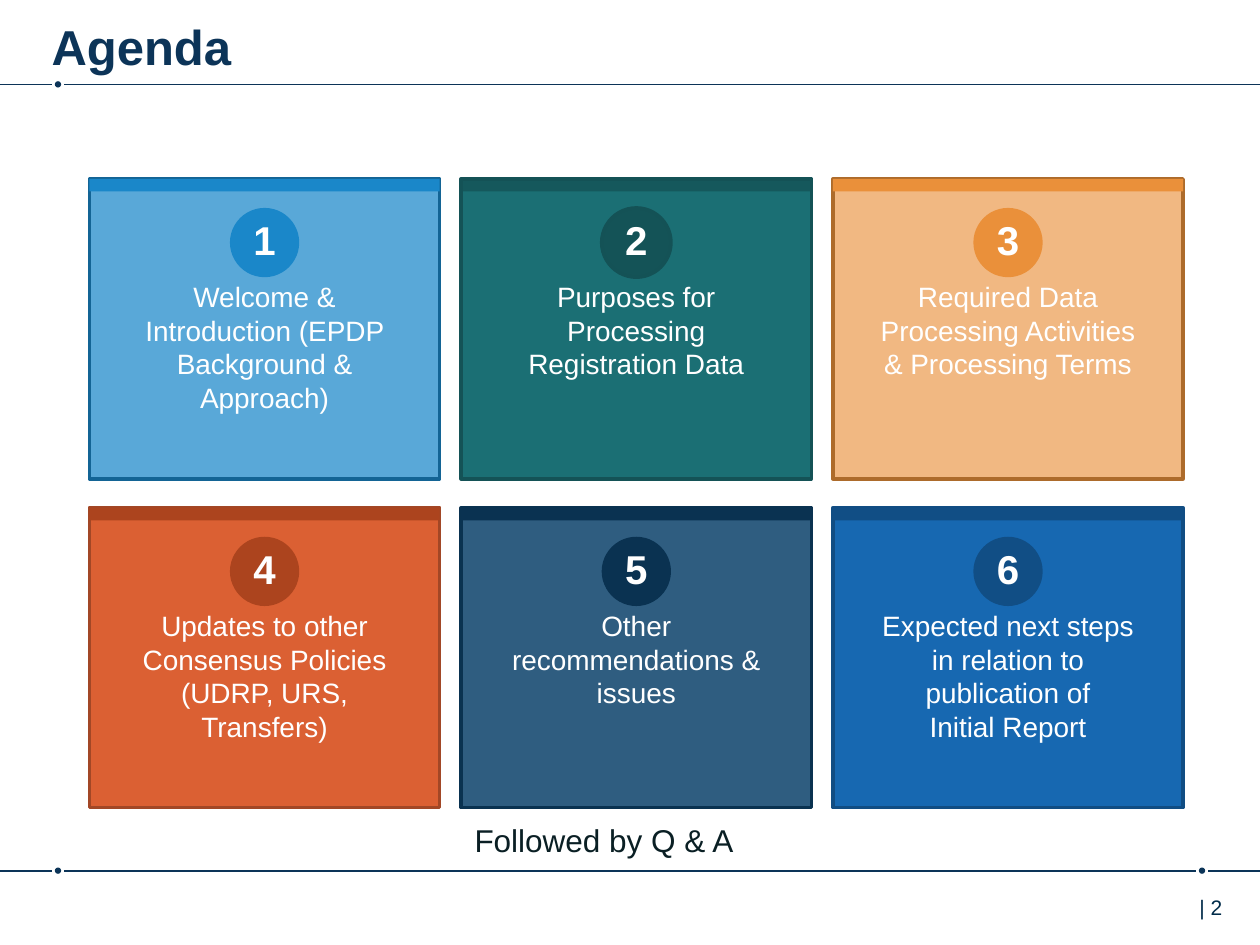
from dataclasses import dataclass

from lxml import etree
from pptx import Presentation
from pptx.dml.color import RGBColor
from pptx.enum.shapes import MSO_CONNECTOR, MSO_SHAPE
from pptx.enum.text import MSO_ANCHOR, PP_ALIGN
from pptx.oxml.ns import qn
from pptx.util import Inches, Pt

RECT, OVAL = MSO_SHAPE.RECTANGLE, MSO_SHAPE.OVAL
LINE = MSO_CONNECTOR.STRAIGHT
LEFT, CENTER = PP_ALIGN.LEFT, PP_ALIGN.CENTER
TOP = MSO_ANCHOR.TOP


@dataclass(frozen=True)
class Theme:
    font: str = "Arial"
    navy: str = "0C3458"
    page: str = "002B49"
    ink: str = "0A1F24"
    white: str = "FFFFFF"
    title: int = 28
    number: int = 23
    note: int = 18
    label: int = 16
    small: int = 12


THEME = Theme()

# Number ring: line colour or None; label: one entry per paragraph
# (body, opacity, border, accent, accent opacity, ring, label)
CARDS = [
    ("1A87C9", 72, "136495", "1A87C9", 100, None,
     ["Welcome & Introduction (EPDP Background & Approach)"]),
    ("1B6F74", 100, "145256", "145357", 80, "145256",
     ["Purposes for Processing Registration Data"]),
    ("EA903A", 63, "AD6B2B", "EA903A", 100, None,
     ["Required Data Processing Activities & Processing Terms"]),
    ("DB6033", 100, "A24726", "AC441E", 100, None,
     ["Updates to other", "Consensus Policies", "(UDRP, URS,", "Transfers)"]),
    ("0D436C", 86, "0A3250", "0A3251", 100, None,
     ["Other", "recommendations &", "issues"]),
    ("1768B1", 100, "114D83", "114E85", 100, None,
     ["Expected next steps", "in relation to", "publication of",
      "Initial Report"]),
]


def add_text(slide, box, lines, size, color, bold=False, align=CENTER,
             inset=(0.1, 0.05), space=None):
    shape = slide.shapes.add_textbox(*map(Inches, box))
    frame = shape.text_frame
    frame.word_wrap = True
    frame.vertical_anchor = TOP
    frame.margin_left = frame.margin_right = Inches(inset[0])
    frame.margin_top = frame.margin_bottom = Inches(inset[1])
    for i, line in enumerate(lines):
        para = frame.paragraphs[0] if i == 0 else frame.add_paragraph()
        para.alignment = align
        if space:
            para.line_spacing = Pt(space)
        run = para.add_run()
        run.text = line
        font = run.font
        font.name, font.size, font.bold = THEME.font, Pt(size), bold
        font.color.rgb = RGBColor.from_string(color)


def add_shape(slide, kind, box, fill, opacity=100, border=None):
    shape = slide.shapes.add_shape(kind, *map(Inches, box))
    shape.shadow.inherit = False
    shape.fill.solid()
    shape.fill.fore_color.rgb = RGBColor.from_string(fill)
    if opacity < 100:
        tint = shape.fill._xPr.find(qn("a:solidFill"))[0]
        etree.SubElement(tint, qn("a:alpha"), val=str(opacity * 1000))
    if border:
        shape.line.color.rgb = RGBColor.from_string(border)
        shape.line.width = Pt(2)
    else:
        shape.line.fill.background()


def add_rule(slide, y, dots, width=10):
    """Draw a full-width rule, broken by a small dot at each given x."""
    gap, size = 0.05, 0.05
    starts = [0] + [x + gap for x in dots]
    ends = [x - gap for x in dots] + [width]
    for x1, x2 in zip(starts, ends):
        line = slide.shapes.add_connector(
            LINE, Inches(x1), Inches(y), Inches(x2), Inches(y))
        line.line.color.rgb = RGBColor.from_string(THEME.navy)
        line.line.width = Pt(1)
        etree.SubElement(line._element.spPr, qn("a:effectLst"))
    for x in dots:
        add_shape(slide, OVAL, (x - size / 2, y - size / 2, size, size),
                  THEME.navy)


def add_card(slide, box, number, card):
    x, y, w, h = box
    body, opacity, border, accent, shade, ring, label = card
    disc, pad = 0.55, 0.26
    add_shape(slide, RECT, box, body, opacity, border)
    add_shape(slide, RECT, (x, y, w, 0.1), accent, shade)
    add_shape(slide, OVAL, (x + (w - disc) / 2, y + 0.23, disc, disc),
              accent, border=ring)
    add_text(slide, (x, y + 0.24, w, 0.49), [str(number)], THEME.number,
             THEME.white, bold=True)
    add_text(slide, (x + pad, y + 0.75, w - 2 * pad, 1.18), label,
             THEME.label, THEME.white, space=19.2)


def add_grid(slide, box, cards, cols=3):
    left, top, width, height = box
    w, h = 2.78, 2.38
    rows = len(cards) // cols
    dx, dy = (width - w) / (cols - 1), (height - h) / (rows - 1)
    for i, card in enumerate(cards):
        row, col = divmod(i, cols)
        add_card(slide, (left + col * dx, top + row * dy, w, h), i + 1, card)


def add_head(slide, box):
    add_text(slide, box, ["Agenda"], THEME.title, THEME.navy, bold=True,
             align=LEFT, inset=(0, 0.08))
    add_rule(slide, 0.67, [0.46])


def add_foot(slide, box):
    add_rule(slide, 6.91, [0.46, 9.54])
    add_text(slide, box, ["| 2"], THEME.small, THEME.page, align=LEFT)


def main():
    deck = Presentation()
    deck.slide_width, deck.slide_height = Inches(10), Inches(7.5)
    slide = deck.slides.add_slide(deck.slide_layouts[6])
    # Title and rule
    add_head(slide, (0.41, 0.05, 8.76, 0.49))
    # Agenda cards
    add_grid(slide, (0.71, 1.42, 8.68, 4.99), CARDS)
    # Closing note
    add_text(slide, (1.53, 6.52, 6.53, 0.3), ["Followed by Q & A"],
             THEME.note, THEME.ink, inset=(0, 0))
    # Rule and page number
    add_foot(slide, (9.42, 7.05, 0.58, 0.4))
    deck.save("out.pptx")


if __name__ == "__main__":
    main()
